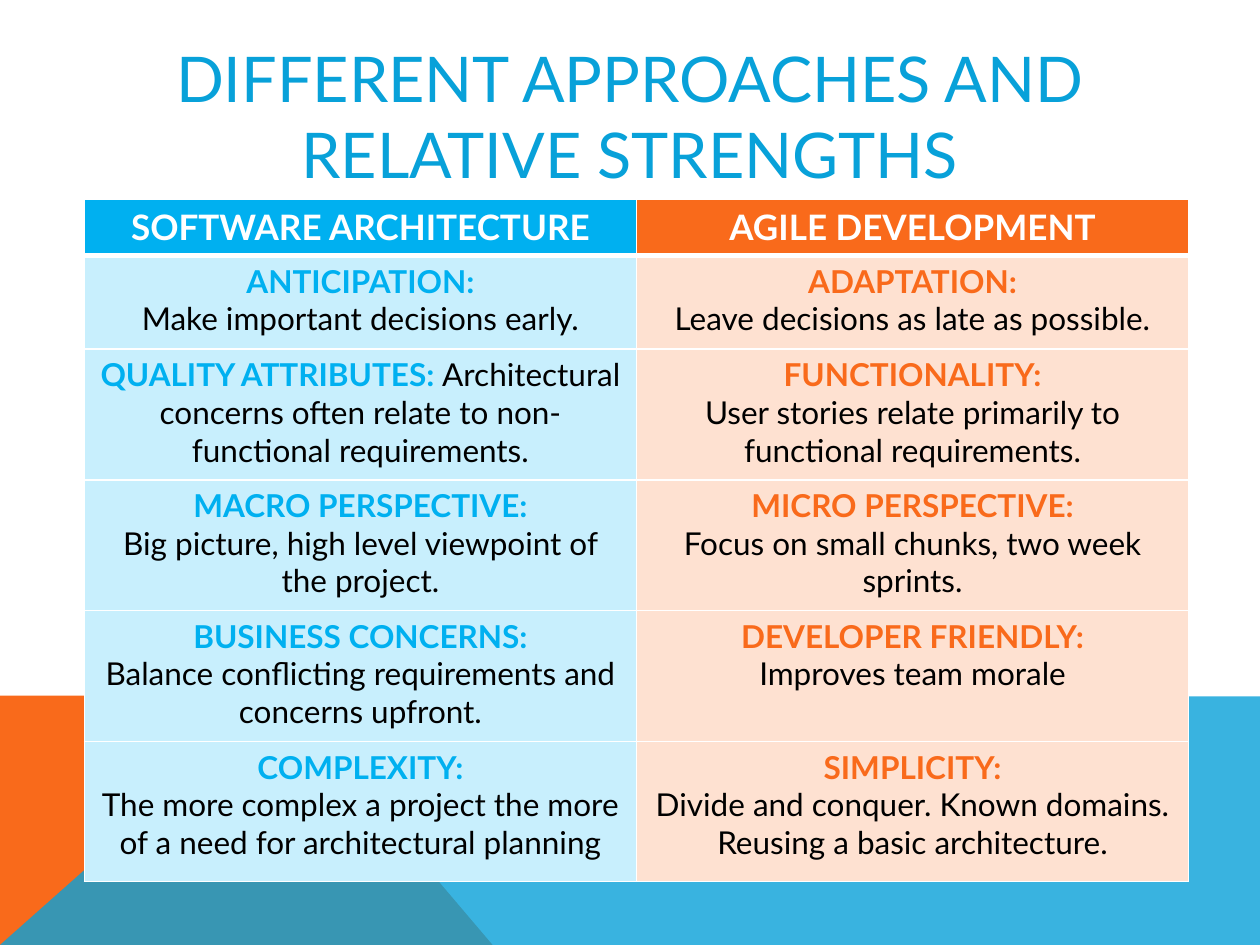
from dataclasses import dataclass

from lxml import etree
from pptx import Presentation
from pptx.dml.color import RGBColor
from pptx.enum.text import MSO_ANCHOR, PP_ALIGN
from pptx.oxml.ns import qn
from pptx.util import Pt

CENTER = PP_ALIGN.CENTER
MIDDLE = MSO_ANCHOR.MIDDLE
BLANK_LAYOUT = 6


@dataclass(frozen=True)
class Theme:
    font: str = "Lato"
    title_size: int = 36
    header_size: int = 20
    body_size: int = 18
    title: str = "08A1D9"
    wave: str = "08A1D9"
    orange: str = "F96A1B"
    blue: str = "00B0F0"
    pale_blue: str = "C8EFFD"
    pale_orange: str = "FEE1D1"
    white: str = "FFFFFF"
    black: str = "000000"


class Page:
    def __init__(self, deck, theme):
        self.theme = theme
        self.slide = deck.slides.add_slide(deck.slide_layouts[BLANK_LAYOUT])

    def polygon(self, points, color, opacity=100):
        corners = [(Pt(x), Pt(y)) for x, y in points]
        builder = self.slide.shapes.build_freeform(*corners[0])
        builder.add_line_segments(corners[1:], close=True)
        shape = builder.convert_to_shape()
        shape.shadow.inherit = False
        shape.line.fill.background()
        shape.fill.solid()
        shape.fill.fore_color.rgb = RGBColor.from_string(color)
        if opacity < 100:
            tone = shape.element.spPr.find(qn("a:solidFill")).find(qn("a:srgbClr"))
            etree.SubElement(tone, qn("a:alpha"), val=str(opacity * 1000))

    def span(self, para, text, size, color, bold=False):
        para.alignment = CENTER
        span = para.add_run()
        span.text = text
        formats = {"name": self.theme.font, "size": Pt(size), "bold": bold}
        for name, value in formats.items():
            setattr(span.font, name, value)
        span.font.color.rgb = RGBColor.from_string(color)

    def title(self, text, left, top, width, height):
        box = self.slide.shapes.add_textbox(Pt(left), Pt(top), Pt(width), Pt(height))
        frame = box.text_frame
        for name, value in {"word_wrap": True, "vertical_anchor": MIDDLE}.items():
            setattr(frame, name, value)
        self.span(frame.paragraphs[0], text, self.theme.title_size, self.theme.title)

    def table(self, left, top, column_width, heights, columns):
        frame = self.slide.shapes.add_table(
            len(heights), len(columns), Pt(left), Pt(top),
            Pt(column_width * len(columns)), Pt(sum(heights)))
        table = frame.table
        for row, height in zip(table.rows, heights):
            row.height = Pt(height)
        for index, (header, strong, pale, entries) in enumerate(columns):
            table.columns[index].width = Pt(column_width)
            cell = table.cell(0, index)
            self.span(cell.text_frame.paragraphs[0], header,
                      self.theme.header_size, self.theme.white, True)
            self.paint(cell, strong, bottom=3)
            for row, (label, body, inline) in enumerate(entries, 1):
                cell = table.cell(row, index)
                self.entry(cell.text_frame, label, body, inline, strong)
                self.paint(cell, pale, top=3 if row == 1 else 1)

    def entry(self, frame, label, body, inline, color):
        size = self.theme.body_size
        para = frame.paragraphs[0]
        self.span(para, label + " " if inline else label, size, color, True)
        if not inline:
            para = frame.add_paragraph()
        self.span(para, body, size, self.theme.black)

    def paint(self, cell, color, top=1, bottom=1):
        cell.fill.solid()
        cell.fill.fore_color.rgb = RGBColor.from_string(color)
        properties = cell._tc.get_or_add_tcPr()
        borders = {"lnL": 1, "lnR": 1, "lnT": top, "lnB": bottom}
        for position, (side, width) in enumerate(borders.items()):
            line = etree.Element(qn("a:" + side), w=str(Pt(width)))
            fill = etree.SubElement(line, qn("a:solidFill"))
            etree.SubElement(fill, qn("a:srgbClr"), val=self.theme.white)
            properties.insert(position, line)


def main():
    theme = Theme()
    deck = Presentation()
    deck.slide_width, deck.slide_height = Pt(720), Pt(540)
    page = Page(deck, theme)

    wave_top, ridge = 397.5, 160.5
    page.polygon([(0, 540), (0, wave_top), (ridge, wave_top), (281.5, 540)],
                 theme.orange)
    page.polygon([(0, 540), (ridge, wave_top), (720, 398), (720, 540)],
                 theme.wave, opacity=80)

    architecture = [
        ("ANTICIPATION:", "Make important decisions early.", False),
        ("QUALITY ATTRIBUTES:", "Architectural concerns often relate to "
         "non-functional requirements.", True),
        ("MACRO PERSPECTIVE:",
         "Big picture, high level viewpoint of the project.", False),
        ("BUSINESS CONCERNS:",
         "Balance conflicting requirements and concerns upfront.", False),
        ("COMPLEXITY:", "The more complex a project the more of a need for "
         "architectural planning", False),
    ]
    agile = [
        ("ADAPTATION:", "Leave decisions as late as possible.", False),
        ("FUNCTIONALITY:",
         "User stories relate primarily to functional requirements.", False),
        ("MICRO PERSPECTIVE:", "Focus on small chunks, two week sprints.", False),
        ("DEVELOPER FRIENDLY:", "Improves team morale", False),
        ("SIMPLICITY:", "Divide and conquer. Known domains. "
         "Reusing a basic architecture.", False),
    ]
    page.table(48.25, 113.75, 315.5, [32.4, 53.3, 74.8, 74.8, 74.8, 79.9], [
        ("SOFTWARE ARCHITECTURE", theme.blue, theme.pale_blue, architecture),
        ("AGILE DEVELOPMENT", theme.orange, theme.pale_orange, agile),
    ])
    page.title("DIFFERENT APPROACHES AND RELATIVE STRENGTHS", 12, 24, 696, 84)

    deck.save("out.pptx")


if __name__ == "__main__":
    main()
